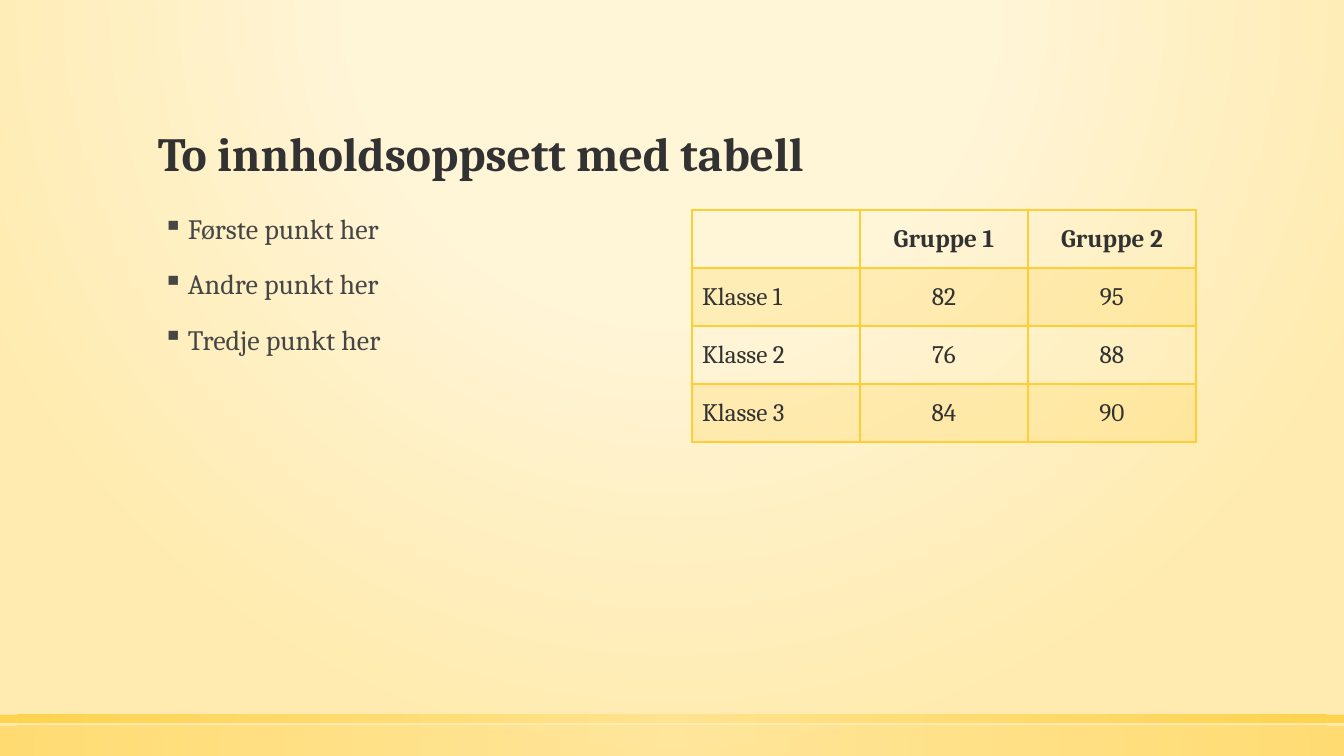
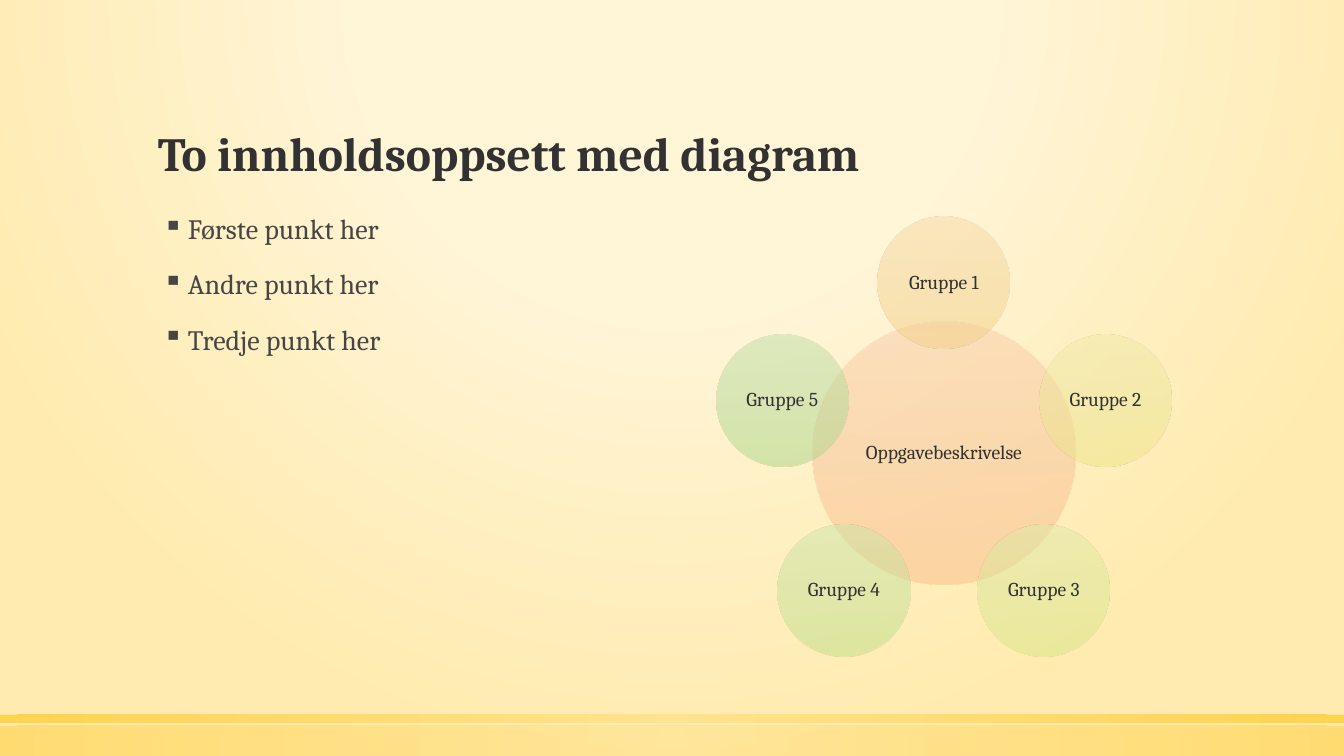
import math
from collections import namedtuple

from lxml import etree
from pptx import Presentation
from pptx.dml.color import RGBColor
from pptx.enum.shapes import MSO_SHAPE
from pptx.enum.text import MSO_ANCHOR, PP_ALIGN
from pptx.oxml.ns import qn
from pptx.util import Pt

RECTANGLE, OVAL = MSO_SHAPE.RECTANGLE, MSO_SHAPE.OVAL
TOP, MIDDLE, BOTTOM = MSO_ANCHOR.TOP, MSO_ANCHOR.MIDDLE, MSO_ANCHOR.BOTTOM
LEFT, CENTER = PP_ALIGN.LEFT, PP_ALIGN.CENTER

Box = namedtuple("Box", "left top width height")

EMU_PER_PX = 914400 / 100.8
SLIDE_WIDTH, SLIDE_HEIGHT = 1344, 756
TITLE_BOX = Box(148, 51, 1048, 136)
BULLET_BOX = Box(148, 210, 504, 455)
TABLE_BOX = Box(692, 210, 504, 232)
RADIAL_BOX = Box(692, 210, 504, 455)

FONT = "Cambria"
DARK = RGBColor(0x32, 0x32, 0x32)
BODY = RGBColor(0x46, 0x46, 0x46)
GOLD = RGBColor(0xFF, 0xCD, 0x36)
PALE_GOLD = RGBColor(0xFF, 0xE1, 0x86)
CREAM = RGBColor(0xFF, 0xF5, 0xD7)
SAND = RGBColor(0xFF, 0xEB, 0xAF)
PEACH = (RGBColor(0xFA, 0xCD, 0xA9), RGBColor(0xF8, 0xC3, 0x9A), RGBColor(0xFB, 0xBB, 0x87))
AMBER = (RGBColor(0xF6, 0xDB, 0xA8), RGBColor(0xF3, 0xD4, 0x9A), RGBColor(0xF5, 0xD1, 0x87))
YELLOW = (RGBColor(0xF1, 0xEA, 0xA8), RGBColor(0xED, 0xE5, 0x9A), RGBColor(0xEE, 0xE5, 0x87))
LIME = (RGBColor(0xE0, 0xEB, 0xA8), RGBColor(0xDA, 0xE7, 0x9A), RGBColor(0xD8, 0xE7, 0x87))
LEAF = (RGBColor(0xCD, 0xE6, 0xA8), RGBColor(0xC5, 0xE1, 0x9A), RGBColor(0xBE, 0xE0, 0x88))
GREEN = (RGBColor(0xBF, 0xE0, 0xA9), RGBColor(0xB4, 0xDA, 0x9B), RGBColor(0xA9, 0xD8, 0x89))

NO_GRID_STYLE = "{2D5ABB26-0587-4C30-8999-92F81FD0307C}"
POINTS = ["Første punkt her", "Andre punkt her", "Tredje punkt her"]
SCORES = [
    ["", "Gruppe 1", "Gruppe 2"],
    ["Klasse 1", "82", "95"],
    ["Klasse 2", "76", "88"],
    ["Klasse 3", "84", "90"],
]
TASK = "Oppgavebeskrivelse"
GROUPS = [
    ("Gruppe 1", AMBER),
    ("Gruppe 2", YELLOW),
    ("Gruppe 3", LIME),
    ("Gruppe 4", LEAF),
    ("Gruppe 5", GREEN),
]


def px(length):
    return round(length * EMU_PER_PX)


def emu(box):
    return [px(length) for length in box]


def add_node(parent, tag, **attributes):
    node = etree.SubElement(parent, qn(tag))
    for key, value in attributes.items():
        node.set(key, str(value))
    return node


def add_color(parent, color, opacity=100):
    node = add_node(parent, "a:srgbClr", val=color)
    if opacity < 100:
        add_node(node, "a:alpha", val=opacity * 1000)


def fill_gradient(fill, owner, stops, focus=None):
    fill.gradient()
    gradient = next(owner.iter(qn("a:gradFill")))
    gradient.clear()
    gradient.set("rotWithShape", "1")
    stop_list = add_node(gradient, "a:gsLst")
    for position, color, opacity in stops:
        add_color(add_node(stop_list, "a:gs", pos=position * 1000), color, opacity)
    if focus:
        circle = add_node(gradient, "a:path", path="circle")
        edges = {side: percent * 1000 for side, percent in zip("ltrb", focus)}
        add_node(circle, "a:fillToRect", **edges)
    else:
        add_node(gradient, "a:lin", ang=90 * 60000, scaled=0)


def style_text(frame, size, color, bold=False, align=LEFT, anchor=TOP, spacing=0.9):
    frame.word_wrap = True
    frame.vertical_anchor = anchor
    for paragraph in frame.paragraphs:
        paragraph.alignment = align
        paragraph.line_spacing = spacing
        for run in paragraph.runs:
            run.font.name = FONT
            run.font.size = Pt(size)
            run.font.bold = bold
            run.font.color.rgb = color


def add_gradient_shape(slide, preset, box, stops, focus=None):
    shape = slide.shapes.add_shape(preset, *emu(box))
    shape.shadow.inherit = False
    shape.line.fill.background()
    fill_gradient(shape.fill, shape._element, stops, focus)
    return shape


def add_band(slide, top, height, opacity):
    stops = [(0, PALE_GOLD, opacity), (100, GOLD, opacity)]
    add_gradient_shape(slide, RECTANGLE, Box(0, top, SLIDE_WIDTH, height), stops, (50, 50, 50, 50))


def add_title(slide, box, title):
    frame = slide.shapes.add_textbox(*emu(box)).text_frame
    frame.text = title
    style_text(frame, 34, DARK, bold=True, anchor=BOTTOM)


def add_bullets(slide, box, points):
    frame = slide.shapes.add_textbox(*emu(box)).text_frame
    frame.text = "\n".join(points)
    style_text(frame, 20, BODY)
    for paragraph in frame.paragraphs:
        paragraph.space_before = Pt(18)
        properties = paragraph._p.get_or_add_pPr()
        properties.set("marL", str(px(30)))
        properties.set("indent", str(-px(25)))
        add_node(properties, "a:buChar", char="▪")


def add_content_slide(deck, title):
    slide = deck.slides.add_slide(deck.slide_layouts[6])
    backdrop = [(0, CREAM, 59), (40, CREAM, 66), (100, SAND, 100)]
    fill_gradient(slide.background.fill, slide._element, backdrop, (50, -80, 50, 180))
    add_band(slide, 726, 30, 50)
    add_band(slide, 715, 8, 80)
    add_title(slide, TITLE_BOX, title)
    add_bullets(slide, BULLET_BOX, POINTS)
    return slide


def set_borders(cell, top, bottom):
    properties = cell._tc.get_or_add_tcPr()
    for side, width in (("L", 1), ("R", 1), ("T", top), ("B", bottom)):
        border = add_node(properties, f"a:ln{side}", w=Pt(width))
        add_color(add_node(border, "a:solidFill"), GOLD)


def fill_cell(cell, shaded):
    if not shaded:
        cell.fill.background()
        return
    cell.fill.solid()
    cell.fill.fore_color.rgb = GOLD
    tint = cell._tc.tcPr.find(qn("a:solidFill"))[0]
    add_node(tint, "a:alpha", val=20000)


def add_score_table(slide, box, scores):
    row_count, column_count = len(scores), len(scores[0])
    frame = slide.shapes.add_table(row_count, column_count, *emu(box))
    table = frame.table
    table.first_row = table.horz_banding = False
    next(frame._element.iter(qn("a:tableStyleId"))).text = NO_GRID_STYLE
    for column in table.columns:
        column.width = px(box.width / column_count)
    for r, row in enumerate(scores):
        table.rows[r].height = px(box.height / row_count)
        for c, value in enumerate(row):
            cell = table.cell(r, c)
            cell.text_frame.text = value
            style_text(cell.text_frame, 18, DARK, bold=r == 0,
                       align=CENTER if c else LEFT, spacing=1.0)
            cell.vertical_anchor = MIDDLE
            set_borders(cell, 2 if r == 1 else 1, 2 if r == 0 else 1)
            fill_cell(cell, r % 2 == 1)


def add_circle(slide, center_x, center_y, diameter, label, colors):
    box = Box(center_x - diameter / 2, center_y - diameter / 2, diameter, diameter)
    stops = [(position, color, 50) for position, color in zip((0, 50, 100), colors)]
    frame = add_gradient_shape(slide, OVAL, box, stops).text_frame
    frame.text = label
    frame.margin_left = frame.margin_right = px(2)
    frame.margin_top = frame.margin_bottom = px(2)
    style_text(frame, 14, DARK, align=CENTER, anchor=MIDDLE)


def add_radial_diagram(slide, box, task, groups):
    hub_x, hub_y = box.left + box.width / 2, box.top + 243
    hub_diameter, group_diameter, orbit = 262, 132, 170
    add_circle(slide, hub_x, hub_y, hub_diameter, task, PEACH)
    for index, (label, colors) in enumerate(groups):
        angle = 2 * math.pi * index / len(groups)
        add_circle(slide, hub_x + orbit * math.sin(angle), hub_y - orbit * math.cos(angle),
                   group_diameter, label, colors)


def main():
    deck = Presentation()
    deck.slide_width, deck.slide_height = px(SLIDE_WIDTH), px(SLIDE_HEIGHT)
    table_slide = add_content_slide(deck, "To innholdsoppsett med tabell")
    add_score_table(table_slide, TABLE_BOX, SCORES)
    diagram_slide = add_content_slide(deck, "To innholdsoppsett med diagram")
    add_radial_diagram(diagram_slide, RADIAL_BOX, TASK, GROUPS)
    deck.save("out.pptx")


if __name__ == "__main__":
    main()
